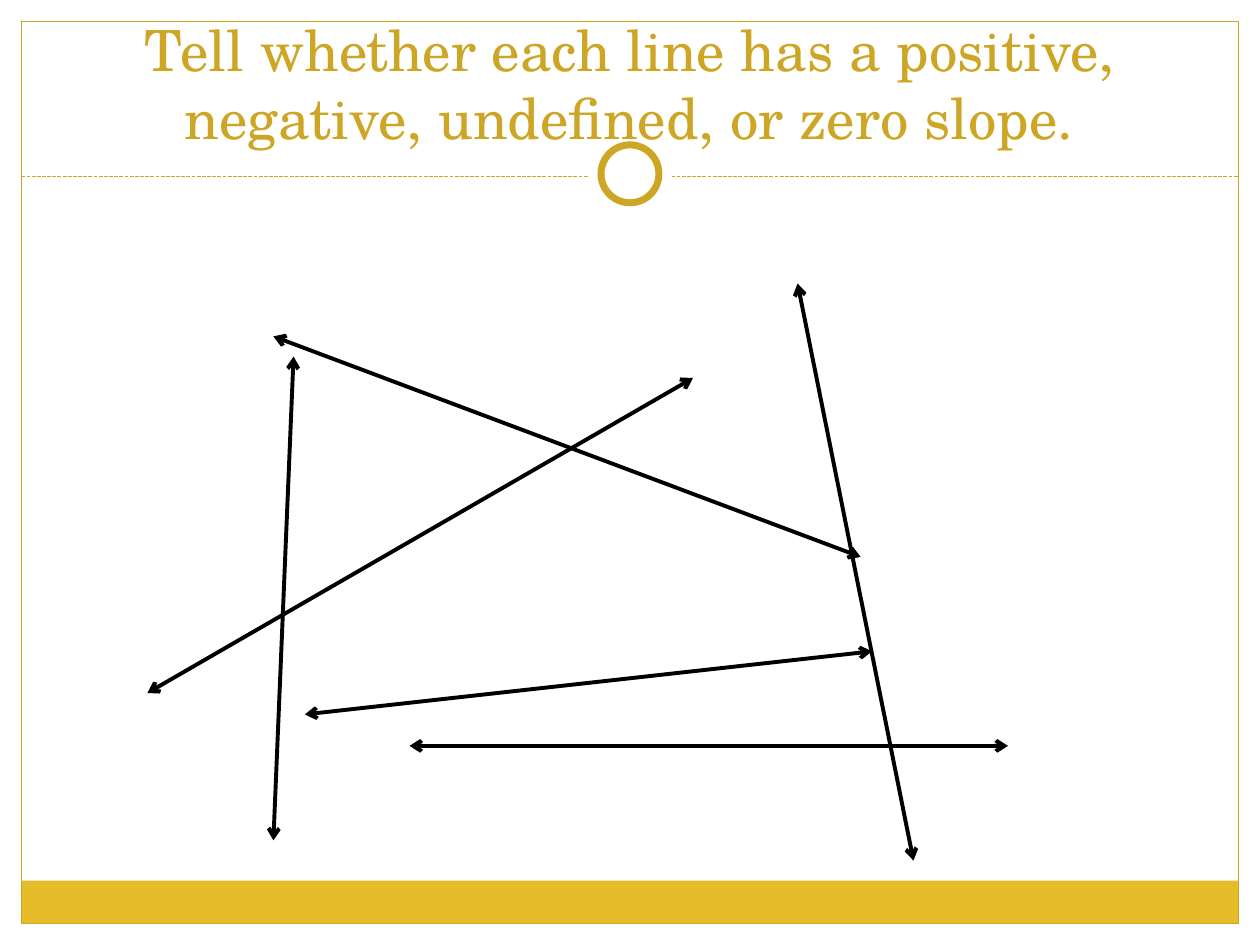
from lxml.etree import SubElement
from pptx import Presentation
from pptx.dml.color import RGBColor
from pptx.enum.dml import MSO_LINE
from pptx.enum.shapes import MSO_CONNECTOR, MSO_SHAPE
from pptx.enum.text import MSO_ANCHOR, MSO_AUTO_SIZE, PP_ALIGN
from pptx.oxml.ns import qn
from pptx.util import Inches, Pt

TITLE = "Tell whether each line has a positive, negative, undefined, or zero slope."
FONT = "TeX Gyre Schola"
COLORS = {"gold": "CCA624", "band": "E7BC29", "paper": "FFFFFF", "ink": "000000"}
W, H = 10, 7.5
MARGIN = 0.17
RULE_Y = 1.4
BAND_TOP, BAND_H = 6.99, 0.34
RING_CENTER = (W / 2, 1.38)

# Start and end of each line, in inches
SLOPE_LINES = [
    ((1.17, 5.5), (5.5, 3)),
    ((3.25, 5.92), (8, 5.92)),
    ((2.17, 2.67), (6.83, 4.42)),
    ((2.33, 2.83), (2.17, 6.67)),
    ((2.42, 5.67), (6.92, 5.17)),
    ((6.33, 2.25), (7.25, 6.83)),
]


def rgb(name):
    return RGBColor.from_string(COLORS[name])


def add_shape(s, kind, x, y, w, h, fill=None, line=None, width=0.75):
    sp = s.shapes.add_shape(kind, Inches(x), Inches(y), Inches(w), Inches(h))
    sp.shadow.inherit = False
    if fill:
        sp.fill.solid()
        sp.fill.fore_color.rgb = rgb(fill)
    else:
        sp.fill.background()
    if line:
        sp.line.color.rgb = rgb(line)
        sp.line.width = Pt(width)
    else:
        sp.line.fill.background()


def add_disc(s, diameter, **style):
    """Add a circle centred on the ring's centre."""
    x, y = (c - diameter / 2 for c in RING_CENTER)
    add_shape(s, MSO_SHAPE.OVAL, x, y, diameter, diameter, **style)


def add_line(s, start, end, color, width, dash=None, arrows=False):
    c = s.shapes.add_connector(MSO_CONNECTOR.STRAIGHT,
                               *(Inches(v) for v in (*start, *end)))
    c.line.color.rgb = rgb(color)
    c.line.width = Pt(width)
    if dash:
        c.line.dash_style = dash
    if arrows:
        ln = c.line._get_or_add_ln()
        for tag in ("a:headEnd", "a:tailEnd"):
            SubElement(ln, qn(tag), type="arrow")
    SubElement(c._element.spPr, qn("a:effectLst"))


def set_text(sp, text, size, color, font=FONT, align=PP_ALIGN.CENTER,
             anchor=MSO_ANCHOR.BOTTOM):
    tf = sp.text_frame
    tf.word_wrap = True
    tf.auto_size = MSO_AUTO_SIZE.NONE
    tf.vertical_anchor = anchor
    p = tf.paragraphs[0]
    p.alignment = align
    r = p.add_run()
    r.text = text
    r.font.size = Pt(size)
    r.font.name = font
    r.font.color.rgb = rgb(color)


def main():
    prs = Presentation()
    prs.slide_width, prs.slide_height = Inches(W), Inches(H)
    s = prs.slides.add_slide(prs.slide_layouts[5])

    inner = W - 2 * MARGIN
    add_shape(s, MSO_SHAPE.RECTANGLE, MARGIN, BAND_TOP, inner, BAND_H, fill="band")
    add_shape(s, MSO_SHAPE.RECTANGLE, MARGIN, MARGIN, inner, H - 2 * MARGIN, line="gold")
    add_line(s, (MARGIN, RULE_Y), (W - MARGIN, RULE_Y), "gold", 0.75,
             dash=MSO_LINE.SQUARE_DOT)
    add_disc(s, 0.67, fill="paper")
    add_disc(s, 0.46, fill="paper", line="gold", width=4)

    title = s.shapes.title
    title.left, title.top = Inches(0.33), Inches(0.25)
    title.width, title.height = Inches(9.33), Inches(1)
    set_text(title, TITLE, size=32.4, color="gold")
    s.shapes._spTree.append(title._element)  # in front of the ring

    for start, end in SLOPE_LINES:
        add_line(s, start, end, "ink", 2.25, arrows=True)

    prs.save("out.pptx")


if __name__ == "__main__":
    main()
